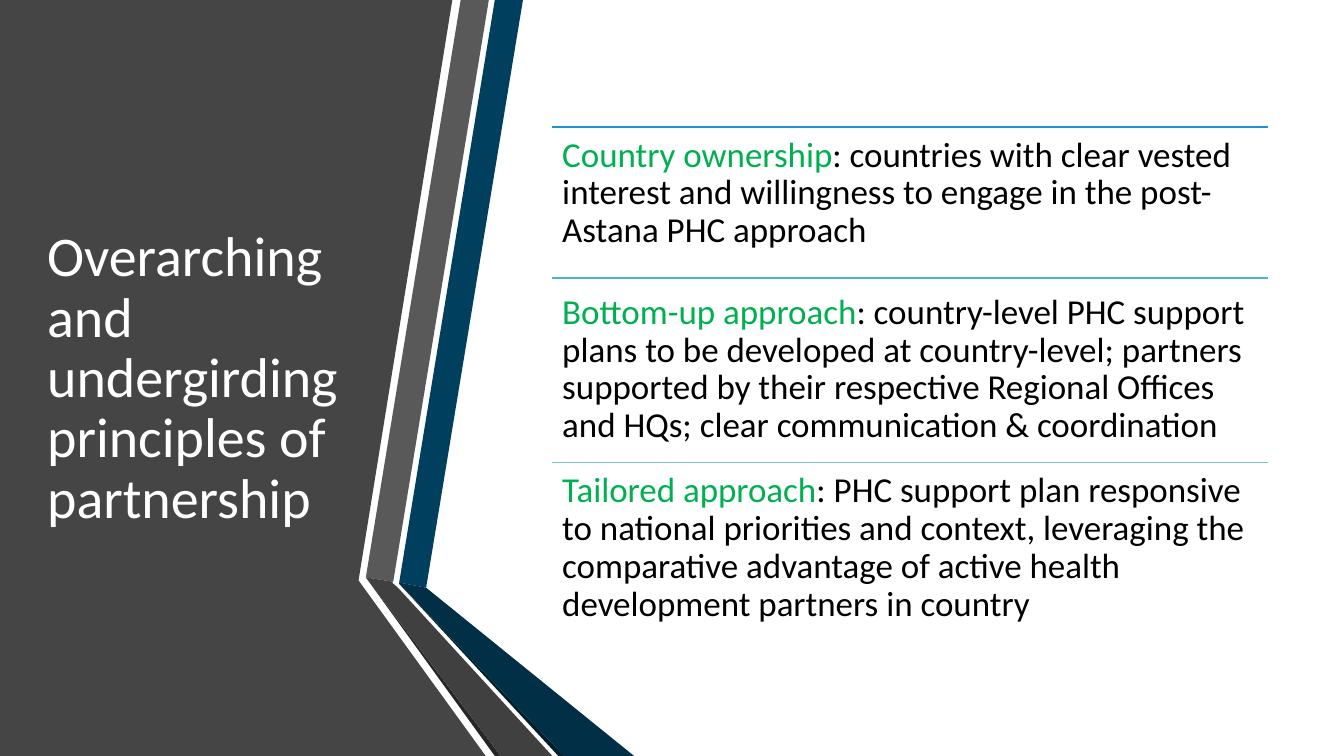
from dataclasses import dataclass

from lxml import etree
from pptx import Presentation
from pptx.dml.color import RGBColor
from pptx.enum.shapes import MSO_CONNECTOR
from pptx.enum.text import MSO_ANCHOR
from pptx.oxml.ns import qn
from pptx.util import Cm, Pt

COLORS = {
    "panel": "454545",
    "navy": "003F5D",
    "navy_edge": "00202E",
    "navy_fold": "002F46",
    "gray": "595959",
    "gray_edge": "262626",
    "gray_fold": "404040",
    "white": "FFFFFF",
    "black": "000000",
    "green": "00B050",
    "rule_blue": "2291D0",
    "rule_teal": "4BB5CE",
    "rule_mint": "78C6C8",
}
FONT = "Calibri"
WIDTH, HEIGHT = 33.87, 19.05
LIST_LEFT, LIST_WIDTH = 13.92, 18.03
INSET = 0.25


@dataclass(frozen=True)
class Facet:
    color: str
    points: tuple[tuple[float, float], ...]


@dataclass(frozen=True)
class Run:
    text: str
    color: str


@dataclass(frozen=True)
class Principle:
    rule_top: float
    rule_color: str
    text_top: float
    height: float
    name: str
    detail: str


FACETS = (
    Facet("panel", ((0, 0), (11.4, 0), (9.04, 14.61), (9.04, 14.63),
                    (12.24, HEIGHT), (0, HEIGHT))),
    Facet("navy", ((10.06, 14.68), (10.74, 14.81), (13.18, 0), (12.47, 0))),
    Facet("gray", ((12.32, 0), (11.61, 0), (9.22, 14.55), (9.91, 14.66))),
    Facet("gray_edge", ((9.22, 14.55), (12.47, HEIGHT), (12.62, HEIGHT))),
    Facet("navy_edge", ((10.06, 14.71), (14.07, HEIGHT), (14.22, HEIGHT))),
    Facet("navy_fold", ((10.06, 14.71), (14.22, HEIGHT), (15.98, HEIGHT),
                        (10.74, 14.81), (10.06, 14.68))),
    Facet("gray_fold", ((13.92, HEIGHT), (10.03, 14.81), (9.88, 14.68),
                        (9.91, 14.66), (9.22, 14.55), (12.62, HEIGHT))),
)

PRINCIPLES = (
    Principle(3.2, "rule_blue", 3.2, 3.81, "Country ownership",
              ": countries with clear vested interest and willingness to engage "
              "in the post-Astana PHC approach"),
    Principle(7.01, "rule_teal", 7.16, 4.67, "Bottom-up approach",
              ": country-level PHC support plans to be developed at country-level; "
              "partners supported by their respective Regional Offices and HQs; "
              "clear communication & coordination"),
    Principle(11.66, "rule_mint", 11.66, 6.83, "Tailored approach",
              ": PHC support plan responsive to national priorities and context, "
              "leveraging the comparative advantage of active health development "
              "partners in country"),
)


def rgb(name: str) -> RGBColor:
    return RGBColor.from_string(COLORS[name])


def add_facet(s, facet: Facet) -> None:
    start, *rest = [(Cm(x), Cm(y)) for x, y in facet.points]
    builder = s.shapes.build_freeform(*start)
    builder.add_line_segments(rest, close=True)
    sp = builder.convert_to_shape()
    sp.shadow.inherit = False
    sp.fill.solid()
    sp.fill.fore_color.rgb = rgb(facet.color)
    sp.line.fill.background()


def add_text(s, left: float, top: float, width: float, height: float,
             runs: tuple[Run, ...], size: float, anchor: MSO_ANCHOR,
             inset_y: float) -> None:
    tf = s.shapes.add_textbox(Cm(left), Cm(top), Cm(width), Cm(height)).text_frame
    tf.word_wrap = True
    tf.vertical_anchor = anchor
    tf.margin_left = tf.margin_right = Cm(INSET)
    tf.margin_top = tf.margin_bottom = Cm(inset_y)
    p = tf.paragraphs[0]
    p.line_spacing = 0.9
    for run in runs:
        r = p.add_run()
        r.text = run.text
        r.font.name = FONT
        r.font.size = Pt(size)
        r.font.color.rgb = rgb(run.color)


def add_rule(s, top: float, color: str) -> None:
    line = s.shapes.add_connector(MSO_CONNECTOR.STRAIGHT, Cm(LIST_LEFT), Cm(top),
                                  Cm(LIST_LEFT + LIST_WIDTH), Cm(top))
    line.line.color.rgb = rgb(color)
    line.line.width = Pt(1)
    etree.SubElement(line._element.spPr, qn("a:effectLst"))


def add_principle(s, item: Principle) -> None:
    add_rule(s, item.rule_top, item.rule_color)
    runs = (Run(item.name, "green"), Run(item.detail, "black"))
    add_text(s, LIST_LEFT, item.text_top, LIST_WIDTH, item.height, runs, 25,
             MSO_ANCHOR.TOP, INSET)


def main() -> None:
    prs = Presentation()
    prs.slide_width, prs.slide_height = Cm(WIDTH), Cm(HEIGHT)
    s = prs.slides.add_slide(prs.slide_layouts[6])
    for facet in FACETS:
        add_facet(s, facet)
    title = Run("Overarching and undergirding principles of partnership", "white")
    add_text(s, 0.94, 1.9, 8.03, 15.32, (title,), 40, MSO_ANCHOR.MIDDLE, 0.13)
    for item in PRINCIPLES:
        add_principle(s, item)
    prs.save("out.pptx")


if __name__ == "__main__":
    main()
